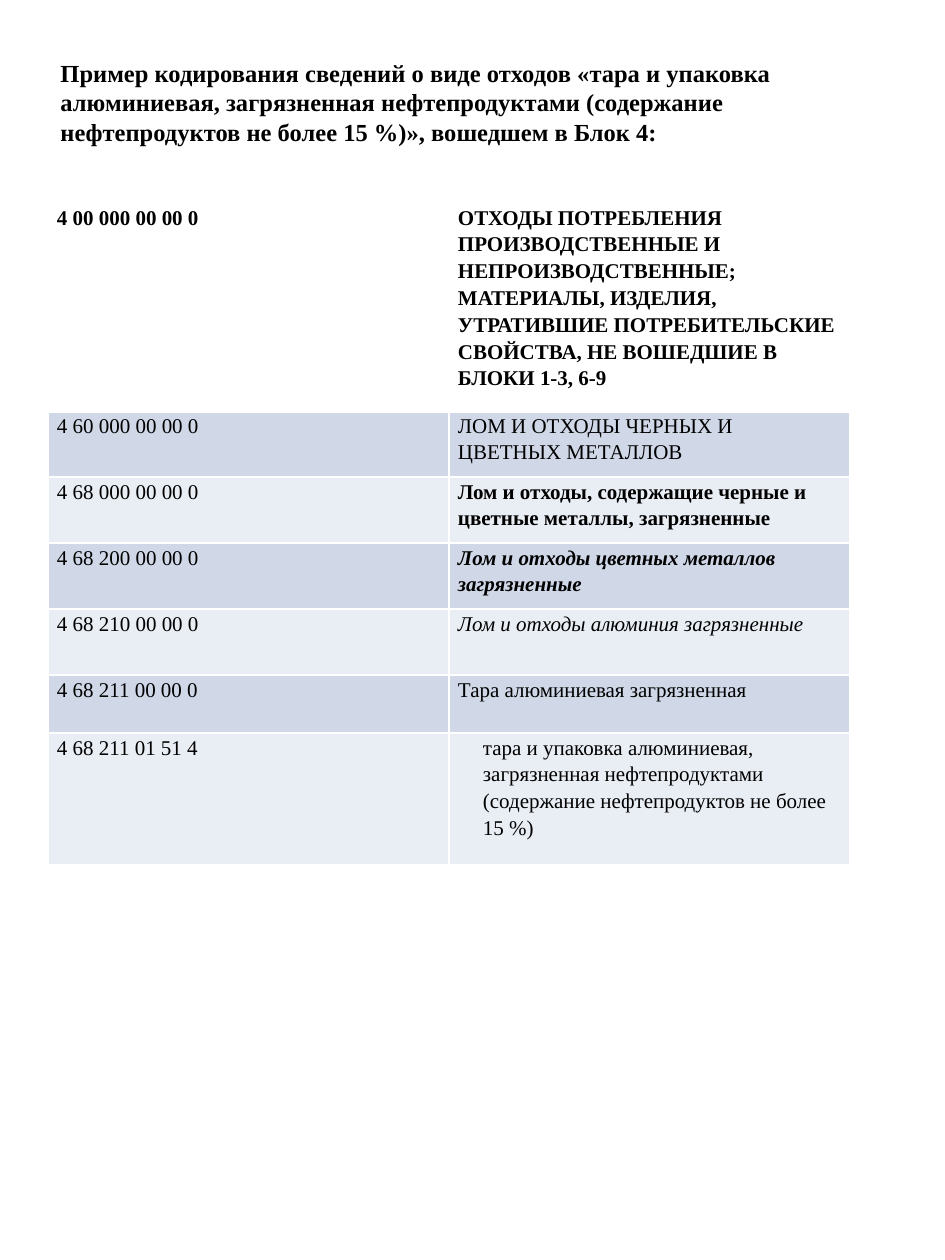
import pptx
import pptx.util
import pptx.dml.color
import pptx.enum.text
import pptx.oxml.ns
import lxml.etree

# Content
HEADING = ("Пример кодирования сведений о виде отходов «тара и упаковка алюминиевая, "
           "загрязненная нефтепродуктами (содержание нефтепродуктов не более 15 %)», "
           "вошедшем в Блок 4:")
BOLD, ITALIC = {"bold": True}, {"italic": True}
# code, code format, waste name, name format, row height in px
WASTE_ROWS = [
    ("4 00 000 00 00 0", BOLD,
     "ОТХОДЫ ПОТРЕБЛЕНИЯ ПРОИЗВОДСТВЕННЫЕ И НЕПРОИЗВОДСТВЕННЫЕ; МАТЕРИАЛЫ, ИЗДЕЛИЯ, "
     "УТРАТИВШИЕ ПОТРЕБИТЕЛЬСКИЕ СВОЙСТВА, НЕ ВОШЕДШИЕ В БЛОКИ 1-3, 6-9", BOLD, 208),
    ("4 60 000 00 00 0", {}, "ЛОМ И ОТХОДЫ ЧЕРНЫХ И ЦВЕТНЫХ МЕТАЛЛОВ", {}, 66),
    ("4 68 000 00 00 0", {},
     "Лом и отходы, содержащие черные и цветные металлы, загрязненные", BOLD, 66),
    ("4 68 200 00 00 0", {}, "Лом и отходы цветных металлов загрязненные",
     {**BOLD, **ITALIC}, 66),
    ("4 68 210 00 00 0", {}, "Лом и отходы алюминия загрязненные", ITALIC, 66),
    ("4 68 211 00 00 0", {}, "Тара алюминиевая загрязненная", {}, 58),
    ("4 68 211 01 51 4", {},
     "тара и упаковка алюминиевая, загрязненная нефтепродуктами "
     "(содержание нефтепродуктов не более 15 %)", {}, 132),
]

THEME = {
    "font": "Times New Roman", "text": "000000", "border": "FFFFFF",
    "bands": ["E9EDF4", "D0D8E8"],
    "heading_pt": 14, "cell_pt": 12, "border_pt": 1, "header_border_pt": 3,
}
PX = pptx.util.Inches(1) / 126


def px(length):
    return pptx.util.Emu(round(length * PX))


def rgb(value):
    return pptx.dml.color.RGBColor.from_string(value)


def write(frame, text, size, style):
    run = frame.paragraphs[0].add_run()
    run.text = text
    values = {"name": THEME["font"], "size": pptx.util.Pt(size),
              "bold": False, "italic": False, **style}
    for key, value in values.items():
        setattr(run.font, key, value)
    run.font.color.rgb = rgb(THEME["text"])


def set_borders(cell, widths):
    props = cell._tc.get_or_add_tcPr()
    for side, width in widths.items():
        line = lxml.etree.SubElement(props, pptx.oxml.ns.qn(f"a:ln{side}"),
                                     w=str(pptx.util.Pt(width)))
        fill = lxml.etree.SubElement(line, pptx.oxml.ns.qn("a:solidFill"))
        lxml.etree.SubElement(fill, pptx.oxml.ns.qn("a:srgbClr"), val=THEME["border"])


def add_heading(slide):
    frame = slide.shapes.add_textbox(px(48), px(50), px(850), px(134)).text_frame
    values = {"word_wrap": True, "margin_top": px(8),
              "vertical_anchor": pptx.enum.text.MSO_ANCHOR.TOP}
    for key, value in values.items():
        setattr(frame, key, value)
    write(frame, HEADING, THEME["heading_pt"], BOLD)


def add_waste_table(slide):
    total = sum(row[-1] for row in WASTE_ROWS)
    table = slide.shapes.add_table(len(WASTE_ROWS), 2, px(48), px(203),
                                   px(802), px(total)).table
    for flag in ("first_row", "horz_banding"):
        setattr(table, flag, False)
    for column in table.columns:
        column.width = px(401)

    margins = {"margin_left": px(9), "margin_right": px(9),
               "margin_top": 0, "margin_bottom": 0}
    thin, thick = THEME["border_pt"], THEME["header_border_pt"]
    for r, (code, code_style, name, name_style, height) in enumerate(WASTE_ROWS):
        table.rows[r].height = px(height)
        for c, (text, style) in enumerate([(code, code_style), (name, name_style)]):
            cell = table.cell(r, c)
            for key, value in margins.items():
                setattr(cell, key, value)
            set_borders(cell, {"L": thin, "R": thin,
                               "T": thick if r == 1 else thin,
                               "B": thick if r == 0 else thin})
            if r == 0:
                cell.fill.background()
            else:
                cell.fill.solid()
                cell.fill.fore_color.rgb = rgb(THEME["bands"][r % 2])
            write(cell.text_frame, text, THEME["cell_pt"], style)
            cell.text_frame.paragraphs[0].line_spacing = 1.15

    # The final waste name is indented
    last_name = table.cell(len(WASTE_ROWS) - 1, 1).text_frame.paragraphs[0]
    last_props = last_name._p.get_or_add_pPr()
    for key, value in {"marL": px(25), "indent": 0}.items():
        last_props.set(key, str(value))


def main():
    deck = pptx.Presentation()
    deck.slide_width, deck.slide_height = px(945), px(1260)
    slide = deck.slides.add_slide(deck.slide_layouts[6])
    add_heading(slide)
    add_waste_table(slide)
    deck.save("out.pptx")


if __name__ == "__main__":
    main()
